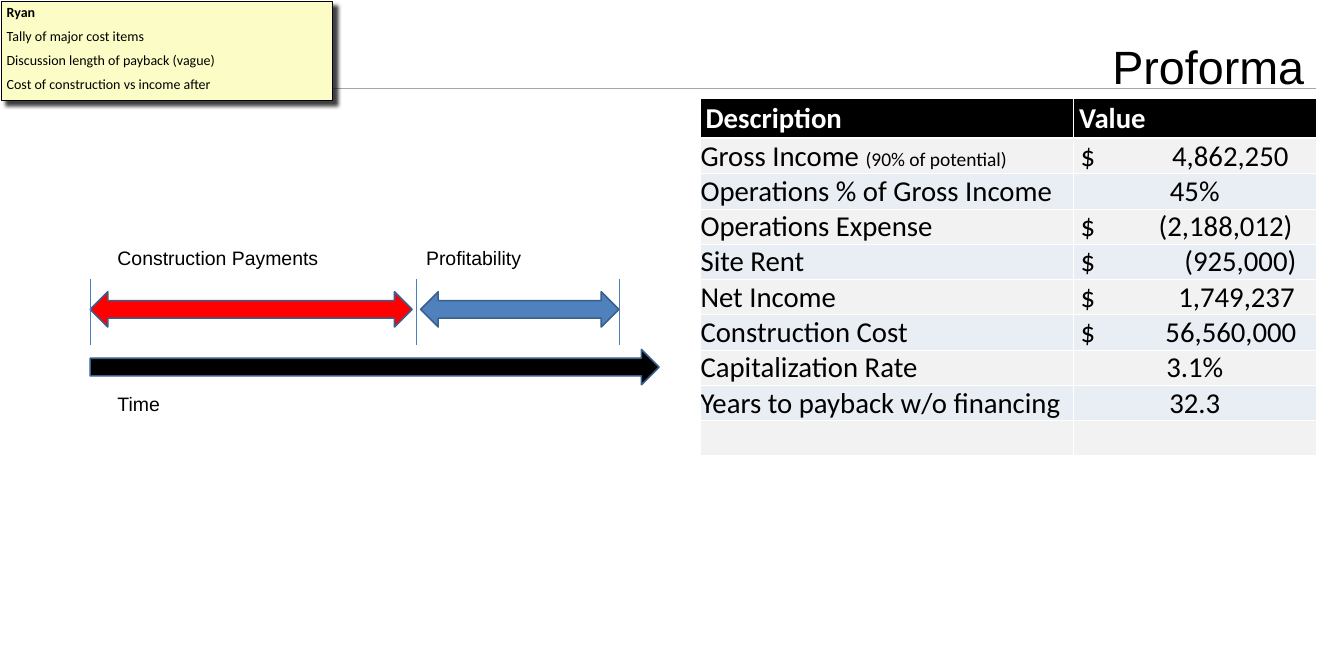
from dataclasses import dataclass

from lxml import etree
from pptx import Presentation
from pptx.dml.color import RGBColor
from pptx.enum.shapes import MSO_CONNECTOR, MSO_SHAPE
from pptx.enum.text import MSO_ANCHOR, MSO_AUTO_SIZE, PP_ALIGN
from pptx.oxml.ns import qn
from pptx.util import Inches, Pt

RECTANGLE = MSO_SHAPE.RECTANGLE
DOUBLE_ARROW = MSO_SHAPE.LEFT_RIGHT_ARROW
RIGHT_ARROW = MSO_SHAPE.RIGHT_ARROW
STRAIGHT = MSO_CONNECTOR.STRAIGHT
TOP, BOTTOM = MSO_ANCHOR.TOP, MSO_ANCHOR.BOTTOM
LEFT, CENTER, RIGHT = PP_ALIGN.LEFT, PP_ALIGN.CENTER, PP_ALIGN.RIGHT
GROW = MSO_AUTO_SIZE.SHAPE_TO_FIT_TEXT

WIDTH, HEIGHT = Inches(24), Inches(12)
COLUMNS, ROWS = 24, 12
COLORS = {
    "black": "000000", "white": "FFFFFF", "rule": "A6A6A6", "note": "FCFDC6",
    "odd": "F2F2F2", "even": "E9EDF4", "payment": "FF0000", "profit": "4F81BD",
    "outline": "3A5F8C", "tick": "4B7EBC",
}
TABLE_SIZE, DETAIL_SIZE = 37, 25
HEADER_ROWS, BODY_ROWS = 0.72, 0.63
TIMELINE_START = 1.61


@dataclass(frozen=True)
class Area:
    column: float
    row: float
    columns: float
    rows: float


@dataclass(frozen=True)
class Arrow:
    area: Area
    kind: int
    fill: str


@dataclass(frozen=True)
class Line:
    start: tuple
    end: tuple
    color: str


@dataclass(frozen=True)
class Label:
    text: str
    area: Area


@dataclass(frozen=True)
class Entry:
    name: str
    value: str
    tab: float = 0
    detail: str = ""


NOTE = ["Ryan", "Tally of major cost items", "Discussion length of payback (vague)",
        "Cost of construction vs income after"]
ARROWS = [
    Arrow(Area(TIMELINE_START, 5.21, 5.75, 0.63), DOUBLE_ARROW, "payment"),
    Arrow(Area(7.51, 5.21, 3.54, 0.63), DOUBLE_ARROW, "profit"),
    Arrow(Area(TIMELINE_START, 6.24, 10.16, 0.63), RIGHT_ARROW, "black"),
]
TICKS = [Line((x, 4.98), (x, 6.16), "tick") for x in (TIMELINE_START, 7.43, 11.06)]
LABELS = [
    Label("Construction Payments", Area(2, 4.35, 5.04, 0.52)),
    Label("Profitability", Area(7.51, 4.35, 3.62, 0.52)),
    Label("Time", Area(2, 6.95, 5.04, 0.52)),
]
ENTRIES = [
    Entry("Gross Income ", "4,862,250", 3.83, "(90% of potential)"),
    Entry("Operations % of Gross Income", "45%"),
    Entry("Operations Expense", "(2,188,012)", 3.9),
    Entry("Site Rent", "(925,000)", 3.97),
    Entry("Net Income", "1,749,237", 3.94),
    Entry("Construction Cost", "56,560,000", 3.97),
    Entry("Capitalization Rate", "3.1%"),
    Entry("Years to payback w/o financing", "32.3"),
    Entry("", ""),
]


def across(columns: float) -> int:
    return round(WIDTH * columns / COLUMNS)


def down(rows: float) -> int:
    return round(HEIGHT * rows / ROWS)


def place(area: Area) -> tuple:
    return across(area.column), down(area.row), across(area.columns), down(area.rows)


def color(name: str) -> RGBColor:
    return RGBColor.from_string(COLORS[name])


def apply(target, values: dict) -> None:
    for name, value in values.items():
        setattr(target, name, value)


def add_span(para, text: str, size: float, font: str = "Arial",
             tint: str = "black", bold: bool = False) -> None:
    span = para.add_run()
    span.text = text
    apply(span.font, {"name": font, "size": Pt(size), "bold": bold})
    span.font.color.rgb = color(tint)


def add_shape(page, kind: int, area: Area, fill: str, outline: str, weight: float):
    shape = page.shapes.add_shape(kind, *place(area))
    shape.shadow.inherit = False
    shape.fill.solid()
    shape.fill.fore_color.rgb = color(fill)
    shape.line.color.rgb = color(outline)
    shape.line.width = Pt(weight)
    return shape


def add_line(page, line: Line) -> None:
    connector = page.shapes.add_connector(
        STRAIGHT, across(line.start[0]), down(line.start[1]),
        across(line.end[0]), down(line.end[1]))
    connector.line.color.rgb = color(line.color)
    connector.line.width = Pt(0.75)
    etree.SubElement(connector._element.spPr, qn("a:effectLst"))


def add_title(page) -> None:
    box = page.shapes.add_textbox(*place(Area(12.5, 0.48, 11, 1.1)))
    apply(box.text_frame, {"word_wrap": True, "vertical_anchor": TOP,
                           "margin_top": Inches(0.2), "margin_right": Inches(0.21)})
    para = box.text_frame.paragraphs[0]
    para.alignment = RIGHT
    add_span(para, "Proforma", 60)


def add_note(page) -> None:
    box = add_shape(page, RECTANGLE, Area(0.02, 0.02, 5.92, 1.77), "note", "black", 0.75)
    effects = box._element.spPr.find(qn("a:effectLst"))
    shadow = etree.SubElement(effects, qn("a:outerShdw"), blurRad=str(Pt(5)),
                              dist=str(Pt(8.5)), dir="2700000", algn="tl")
    tint = etree.SubElement(shadow, qn("a:srgbClr"), val=COLORS["black"])
    etree.SubElement(tint, qn("a:alpha"), val="75000")
    frame = box.text_frame
    apply(frame, {"word_wrap": True, "vertical_anchor": TOP, "auto_size": GROW})
    for index, text in enumerate(NOTE):
        para = frame.add_paragraph() if index else frame.paragraphs[0]
        apply(para, {"alignment": LEFT, "space_before": Pt(9)})
        add_span(para, text, 18, "Calibri", bold=index == 0)


def add_label(page, label: Label) -> None:
    box = page.shapes.add_textbox(*place(label.area))
    apply(box.text_frame, {"word_wrap": True, "auto_size": GROW})
    add_span(box.text_frame.paragraphs[0], label.text, DETAIL_SIZE)


def style_cell(cell, fill: str, top: float, bottom: float) -> None:
    cell.fill.solid()
    cell.fill.fore_color.rgb = color(fill)
    edges = {"L": 1, "R": 1, "T": top, "B": bottom}
    for index, (side, weight) in enumerate(edges.items()):
        border = etree.Element(qn(f"a:ln{side}"), w=str(Pt(weight)))
        paint = etree.SubElement(border, qn("a:solidFill"))
        etree.SubElement(paint, qn("a:srgbClr"), val=COLORS["white"])
        cell._tc.get_or_add_tcPr().insert(index, border)


def add_value(para, entry: Entry) -> None:
    if entry.tab:
        tabs = etree.SubElement(para._p.get_or_add_pPr(), qn("a:tabLst"))
        etree.SubElement(tabs, qn("a:tab"), pos=str(across(entry.tab)), algn="r")
        add_span(para, f" $\t{entry.value}", TABLE_SIZE, "Calibri")
    elif entry.value:
        para.alignment = CENTER
        add_span(para, entry.value, TABLE_SIZE, "Calibri")


def add_proforma(page) -> None:
    area = Area(12.5, 1.75, 11, HEADER_ROWS + BODY_ROWS * len(ENTRIES))
    table = page.shapes.add_table(len(ENTRIES) + 1, 2, *place(area)).table
    for column, columns in zip(table.columns, (6.67, 4.33)):
        column.width = across(columns)
    for index, row in enumerate(table.rows):
        row.height = down(BODY_ROWS if index else HEADER_ROWS)
    for cell, heading in zip(table.rows[0].cells, ("Description", "Value")):
        style_cell(cell, "black", 1, 3)
        add_span(cell.text_frame.paragraphs[0], heading, TABLE_SIZE, "Calibri", "white", True)
    margins = {"margin_left": Inches(0.01), "margin_right": Inches(0.01),
               "margin_top": Inches(0.01), "margin_bottom": 0, "vertical_anchor": BOTTOM}
    for index, entry in enumerate(ENTRIES, 1):
        cells = table.rows[index].cells
        for cell in cells:
            style_cell(cell, "odd" if index % 2 else "even", 3 if index == 1 else 1, 1)
            apply(cell, margins)
        name, value = (cell.text_frame.paragraphs[0] for cell in cells)
        if entry.name:
            add_span(name, entry.name, TABLE_SIZE, "Calibri")
        if entry.detail:
            add_span(name, entry.detail, DETAIL_SIZE, "Calibri")
        add_value(value, entry)


def main() -> None:
    deck = Presentation()
    apply(deck, {"slide_width": WIDTH, "slide_height": HEIGHT})
    page = deck.slides.add_slide(deck.slide_layouts[6])
    add_line(page, Line((23.5, 1.58), (0.5, 1.58), "rule"))
    add_title(page)
    add_note(page)
    add_proforma(page)
    for arrow in ARROWS:
        add_shape(page, arrow.kind, arrow.area, arrow.fill, "outline", 2)
    for tick in TICKS:
        add_line(page, tick)
    for label in LABELS:
        add_label(page, label)
    deck.save("out.pptx")


if __name__ == "__main__":
    main()
